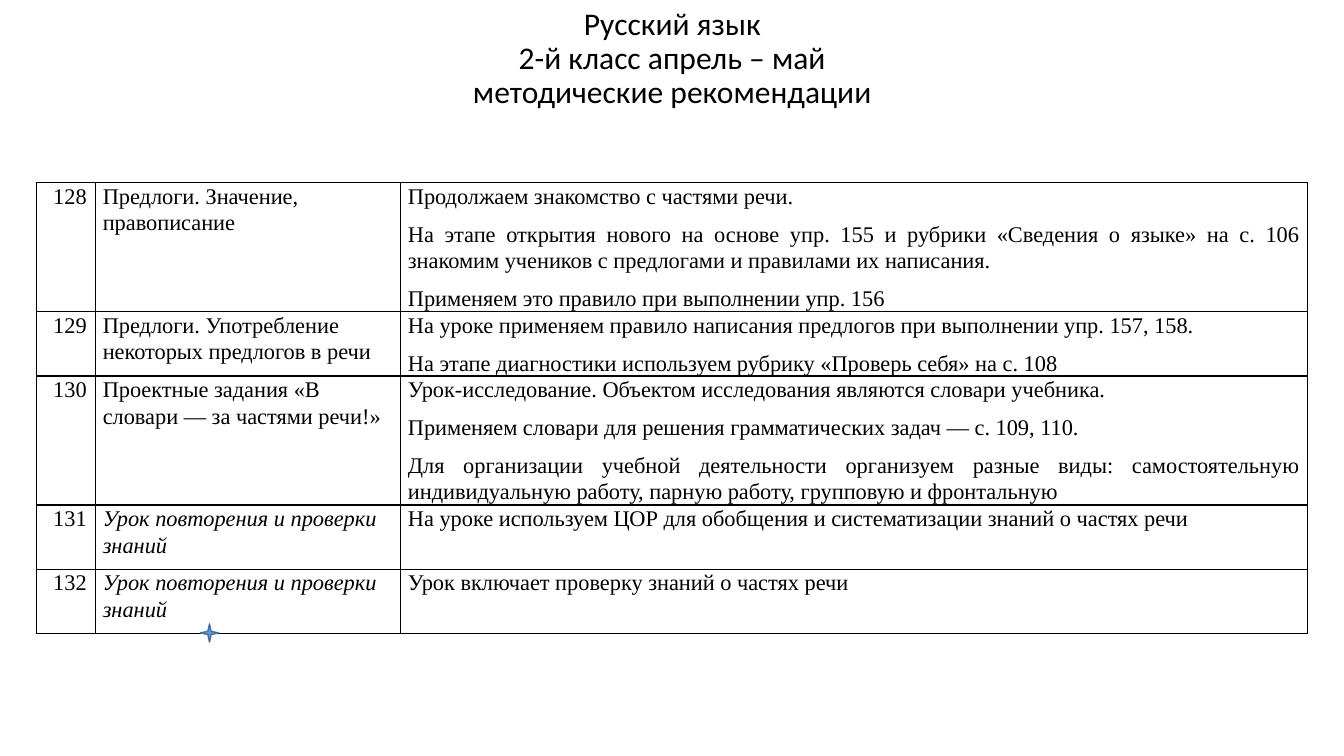
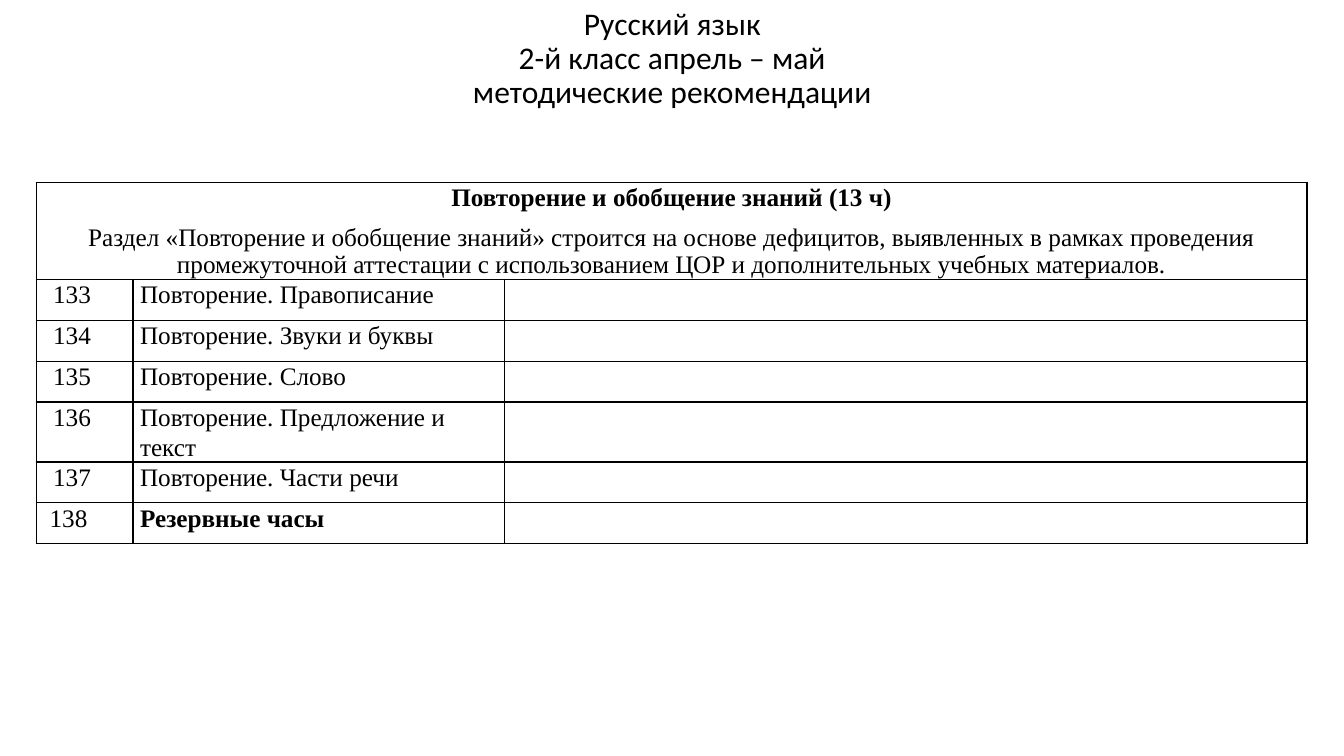
from lxml import etree
from pptx import Presentation
from pptx.dml.color import RGBColor
from pptx.enum.shapes import MSO_SHAPE
from pptx.enum.text import MSO_ANCHOR, MSO_AUTO_SIZE, PP_ALIGN
from pptx.oxml.ns import qn
from pptx.util import Cm, Pt

CENTER, JUSTIFY, LEFT = PP_ALIGN.CENTER, PP_ALIGN.JUSTIFY, PP_ALIGN.LEFT
MIDDLE = MSO_ANCHOR.MIDDLE
NO_AUTOFIT = MSO_AUTO_SIZE.NONE
STAR = MSO_SHAPE.STAR_4_POINT

BLACK, BLUE, DARK_BLUE = "000000", "5B9BD5", "43739E"
TITLE_FONT, TABLE_FONT = "Calibri", "Times New Roman"
TITLE_BOX = (2.34, 0.2, 29.21, 2.59)
TABLE_BOX = (0.91, 4.6, 32.03)
TITLE_LINES = ["Русский язык", "2-й класс апрель – май", "методические рекомендации"]
NUMBER_INDENT = 0.25

# Number, topic, topic in italics, recommendations, row height
LESSONS = [
    ("128", "Предлоги. Значение, правописание", False, [
        "Продолжаем знакомство с частями речи.",
        "На этапе открытия нового на основе упр. 155 и рубрики «Сведения о языке» "
        "на с. 106 знакомим учеников с предлогами и правилами их написания.",
        "Применяем это правило при выполнении упр. 156"], 3.25),
    ("129", "Предлоги. Употребление некоторых предлогов в речи", False, [
        "На уроке применяем правило написания предлогов при выполнении упр. 157, 158.",
        "На этапе диагностики используем рубрику «Проверь себя» на с. 108"], 1.62),
    ("130", "Проектные задания «В словари — за частями речи!»", False, [
        "Урок-исследование. Объектом исследования являются словари учебника.",
        "Применяем словари для решения грамматических задач — с. 109, 110.",
        "Для организации учебной деятельности организуем разные виды: самостоятельную "
        "индивидуальную работу, парную работу, групповую и фронтальную"], 3.25),
    ("131", "Урок повторения и проверки знаний", True, [
        "На уроке используем ЦОР для обобщения и систематизации знаний о частях речи"], 1.62),
    ("132", "Урок повторения и проверки знаний", True, [
        "Урок включает проверку знаний о частях речи"], 1.62),
]

SECTION_TITLE = "Повторение и обобщение знаний (13 ч)"
SECTION_NOTE = ("Раздел «Повторение и обобщение знаний» строится на основе дефицитов, "
                "выявленных в рамках проведения промежуточной аттестации с использованием "
                "ЦОР и дополнительных учебных материалов.")
# Number, topic, row height
REVIEWS = [
    ("133", "Повторение. Правописание", 1.03),
    ("134", "Повторение. Звуки и буквы", 1.03),
    ("135", "Повторение. Слово", 1.03),
    ("136", "Повторение. Предложение и текст", 1.51),
    ("137", "Повторение. Части речи", 1.03),
]
RESERVE = ("138", "Резервные часы", 1.03)


def color(value):
    return RGBColor.from_string(value)


def add_run(paragraph, text, font_name, size, bold=False, italic=False):
    run = paragraph.add_run()
    run.text = text
    font = run.font
    font.name, font.size = font_name, Pt(size)
    font.bold, font.italic = bold, italic
    font.color.rgb = color(BLACK)


def add_title(slide, box):
    title = slide.shapes.title
    title.left, title.top, title.width, title.height = map(Cm, box)
    frame = title.text_frame
    frame.word_wrap = True
    frame.auto_size = NO_AUTOFIT
    frame.vertical_anchor = MIDDLE
    paragraph = frame.paragraphs[0]
    paragraph.alignment = CENTER
    paragraph.line_spacing = 0.9
    for index, line in enumerate(TITLE_LINES):
        if index:
            paragraph.add_line_break()
        add_run(paragraph, line, TITLE_FONT, 22.5)


def add_borders(cell):
    properties = cell._tc.get_or_add_tcPr()
    for side in ("lnL", "lnR", "lnT", "lnB"):
        line = etree.SubElement(properties, qn(f"a:{side}"), w=str(Pt(1)))
        fill = etree.SubElement(line, qn("a:solidFill"))
        etree.SubElement(fill, qn("a:srgbClr"), val=BLACK)


def add_grid(slide, box, first_columns, row_heights):
    """Add an unfilled, bordered table whose third column takes the remaining width."""
    left, top, width = box
    columns = [*first_columns, width - sum(first_columns)]
    frame = slide.shapes.add_table(len(row_heights), len(columns), Cm(left), Cm(top),
                                   Cm(width), Cm(sum(row_heights)))
    table = frame.table
    table.first_row = table.horz_banding = False
    for column, column_width in zip(table.columns, columns):
        column.width = Cm(column_width)
    for row, row_height in zip(table.rows, row_heights):
        row.height = Cm(row_height)
    for cell in table.iter_cells():
        cell.margin_left = cell.margin_right = Cm(0.18)
        cell.margin_top = cell.margin_bottom = 0
        add_borders(cell)
        cell.fill.background()
    return table


def write_cell(cell, texts, size, alignment=LEFT, indent=0, bold=False, italic=False):
    frame = cell.text_frame
    for index, text in enumerate(texts):
        paragraph = frame.add_paragraph() if index else frame.paragraphs[0]
        paragraph._p.get_or_add_pPr().set("marL", str(Cm(indent)))
        paragraph.alignment = alignment
        paragraph.line_spacing = 1.07
        paragraph.space_after = Pt(8)
        add_run(paragraph, text, TABLE_FONT, size, bold, italic)


def add_lesson_table(slide, box):
    table = add_grid(slide, box, [1.5, 7.69], [lesson[-1] for lesson in LESSONS])
    for row, (number, topic, italic, advice, _) in enumerate(LESSONS):
        write_cell(table.cell(row, 0), [number], 16, indent=NUMBER_INDENT)
        write_cell(table.cell(row, 1), [topic], 16, italic=italic)
        write_cell(table.cell(row, 2), advice, 16, JUSTIFY)


def add_review_table(slide, box):
    reviews = [*REVIEWS, RESERVE]
    table = add_grid(slide, box, [2.44, 9.37], [2.44] + [review[-1] for review in reviews])
    section = table.cell(0, 0)
    section.merge(table.cell(0, 2))
    write_cell(section, [SECTION_TITLE], 18, CENTER, bold=True)
    note = section.text_frame.add_paragraph()
    note.alignment = CENTER
    add_run(note, SECTION_NOTE, TABLE_FONT, 18)
    for row, review in enumerate(reviews, 1):
        number, topic, _ = review
        is_reserve = review is RESERVE
        indent = 0.16 if is_reserve else NUMBER_INDENT
        write_cell(table.cell(row, 0), [number], 18, indent=indent)
        write_cell(table.cell(row, 1), [topic], 18, bold=is_reserve)


def add_star(slide, left, top, size):
    star = slide.shapes.add_shape(STAR, Cm(left), Cm(top), Cm(size), Cm(size))
    star.shadow.inherit = False
    star.fill.solid()
    star.fill.fore_color.rgb = color(BLUE)
    star.line.color.rgb = color(DARK_BLUE)
    star.line.width = Pt(1)


def add_titled_slide(presentation):
    slide = presentation.slides.add_slide(presentation.slide_layouts[5])
    add_title(slide, TITLE_BOX)
    return slide


def main():
    presentation = Presentation()
    presentation.slide_width, presentation.slide_height = Cm(33.87), Cm(19.05)
    lesson_slide = add_titled_slide(presentation)
    add_lesson_table(lesson_slide, TABLE_BOX)
    add_star(lesson_slide, 5.05, 15.72, 0.46)
    add_review_table(add_titled_slide(presentation), TABLE_BOX)
    presentation.save("out.pptx")


if __name__ == "__main__":
    main()
